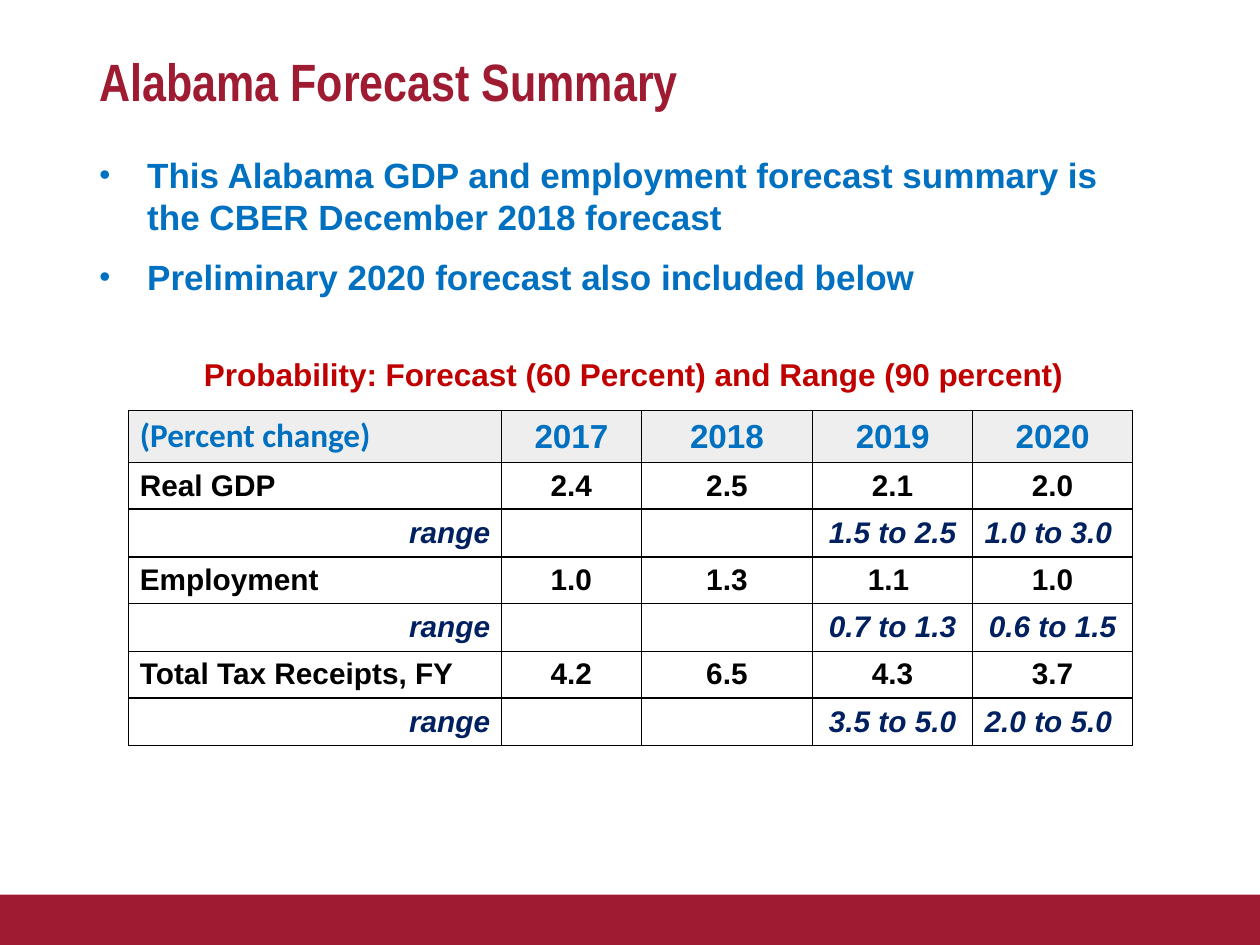
from pptx import Presentation
from pptx.dml.color import RGBColor
from pptx.enum.shapes import MSO_SHAPE as Shape
from pptx.enum.text import MSO_ANCHOR as Anchor, PP_ALIGN as Align
from pptx.oxml.ns import qn
from pptx.util import Inches, Pt
from lxml.etree import SubElement

COLORS = {
    "crimson": "9E1B32",
    "blue": "0070C0",
    "red": "C00000",
    "navy": "002060",
    "black": "000000",
    "header": "EEEEEE",
}
HEADINGS = ["(Percent change)", "2017", "2018", "2019", "2020"]
FORECASTS = [
    ["Real GDP", "2.4", "2.5", "2.1", "2.0"],
    ["range", "", "", "1.5 to 2.5", "1.0 to 3.0 "],
    ["Employment", "1.0", "1.3", "1.1 ", "1.0"],
    ["range", "", "", "0.7 to 1.3", "0.6 to 1.5"],
    ["Total Tax Receipts, FY", "4.2", "6.5", "4.3", "3.7"],
    ["range", "", "", "3.5 to 5.0", "2.0 to 5.0 "],
]
COLUMN_WIDTHS = [2.96, 1.11, 1.36, 1.27, 1.27]
ROW_HEIGHTS = [0.41] + [0.37] * 5 + [0.38]


def color(name):
    return RGBColor.from_string(COLORS[name])


def write(paragraph, text, *, size, ink, font="Arial", italic=False,
          align=Align.LEFT, spacing=None):
    paragraph.alignment = align
    if spacing:
        paragraph.line_spacing = spacing
    if not text:
        return
    run = paragraph.add_run()
    run.text = text
    run.font.name = font
    run.font.size = Pt(size)
    run.font.bold = True
    run.font.italic = italic
    run.font.color.rgb = color(ink)


class ForecastSlide:
    indent = Inches(0.38)
    cell_margin_x = Inches(0.09)
    cell_margin_y = Inches(0.04)
    border_width = Pt(1)

    def __init__(self, presentation):
        self.slide = presentation.slides.add_slide(presentation.slide_layouts[6])

    def bar(self, left, top, width, height, fill):
        shape = self.slide.shapes.add_shape(
            Shape.RECTANGLE, *map(Inches, (left, top, width, height)))
        shape.shadow.inherit = False
        shape.fill.solid()
        shape.fill.fore_color.rgb = color(fill)
        shape.line.fill.background()

    def frame(self, place, wrap=True):
        box = self.slide.shapes.add_textbox(*map(Inches, place))
        box.text_frame.word_wrap = wrap
        return box.text_frame

    def text(self, place, text, wrap=True, **style):
        write(self.frame(place, wrap).paragraphs[0], text, **style)

    def bullets(self, place, items, **style):
        frame = self.frame(place)
        for index, item in enumerate(items):
            paragraph = frame.add_paragraph() if index else frame.paragraphs[0]
            properties = paragraph._p.get_or_add_pPr()
            properties.set("marL", str(self.indent))
            properties.set("indent", str(-self.indent))
            SubElement(properties, qn("a:buSzPct"), val="90000")
            SubElement(properties, qn("a:buFont"), typeface="Arial")
            SubElement(properties, qn("a:buChar"), char="•")
            paragraph.space_before = Pt(4 if index else 0)
            paragraph.space_after = Pt(6)
            write(paragraph, item, **style)

    def borders(self, cell):
        properties = cell._tc.get_or_add_tcPr()
        for side in ("lnL", "lnR", "lnT", "lnB"):
            line = SubElement(properties, qn(f"a:{side}"), w=str(self.border_width))
            fill = SubElement(line, qn("a:solidFill"))
            SubElement(fill, qn("a:srgbClr"), val=COLORS["black"])

    def cell(self, cell, text, fill=None, **style):
        cell.margin_left = cell.margin_right = self.cell_margin_x
        cell.margin_top = cell.margin_bottom = self.cell_margin_y
        cell.vertical_anchor = Anchor.MIDDLE
        self.borders(cell)
        if fill:
            cell.fill.solid()
            cell.fill.fore_color.rgb = color(fill)
        else:
            cell.fill.background()
        write(cell.text_frame.paragraphs[0], text, **style)

    def table(self, left, top, headings, rows):
        table = self.slide.shapes.add_table(
            len(rows) + 1, len(headings), Inches(left), Inches(top),
            Inches(sum(COLUMN_WIDTHS)), Inches(sum(ROW_HEIGHTS))).table
        table.first_row = table.horz_banding = False
        for column, width in zip(table.columns, COLUMN_WIDTHS):
            column.width = Inches(width)
        for row, height in zip(table.rows, ROW_HEIGHTS):
            row.height = Inches(height)
        for index, heading in enumerate(headings):
            self.cell(table.cell(0, index), heading, fill="header", size=19, ink="blue",
                      font="Arial" if index else "Calibri",
                      align=Align.CENTER if index else Align.LEFT)
        for row_index, values in enumerate(rows, 1):
            is_range = values[0] == "range"
            label_align = Align.RIGHT if is_range else Align.LEFT
            for index, value in enumerate(values):
                self.cell(table.cell(row_index, index), value, size=17,
                          ink="navy" if is_range else "black", italic=is_range,
                          align=Align.CENTER if index else label_align)


def main():
    presentation = Presentation()
    presentation.slide_width = Inches(10)
    presentation.slide_height = Inches(7.5)
    page = ForecastSlide(presentation)
    page.bar(0, 7.1, 10, 0.4, "crimson")
    page.text((0.69, 0.4, 8.62, 0.65), "Alabama Forecast Summary",
              size=30, ink="crimson", font="Arial Narrow", spacing=0.9)
    page.bullets((0.69, 1.17, 8.28, 1.68), [
        "This Alabama GDP and employment forecast summary is the CBER December 2018 forecast",
        "Preliminary 2020 forecast also included below",
    ], size=20, ink="blue")
    page.text((1.52, 2.77, 7.09, 0.4),
              "Probability: Forecast (60 Percent) and Range (90 percent)",
              wrap=False, size=18, ink="red")
    page.table(1.02, 3.26, HEADINGS, FORECASTS)
    presentation.save("out.pptx")


if __name__ == "__main__":
    main()
